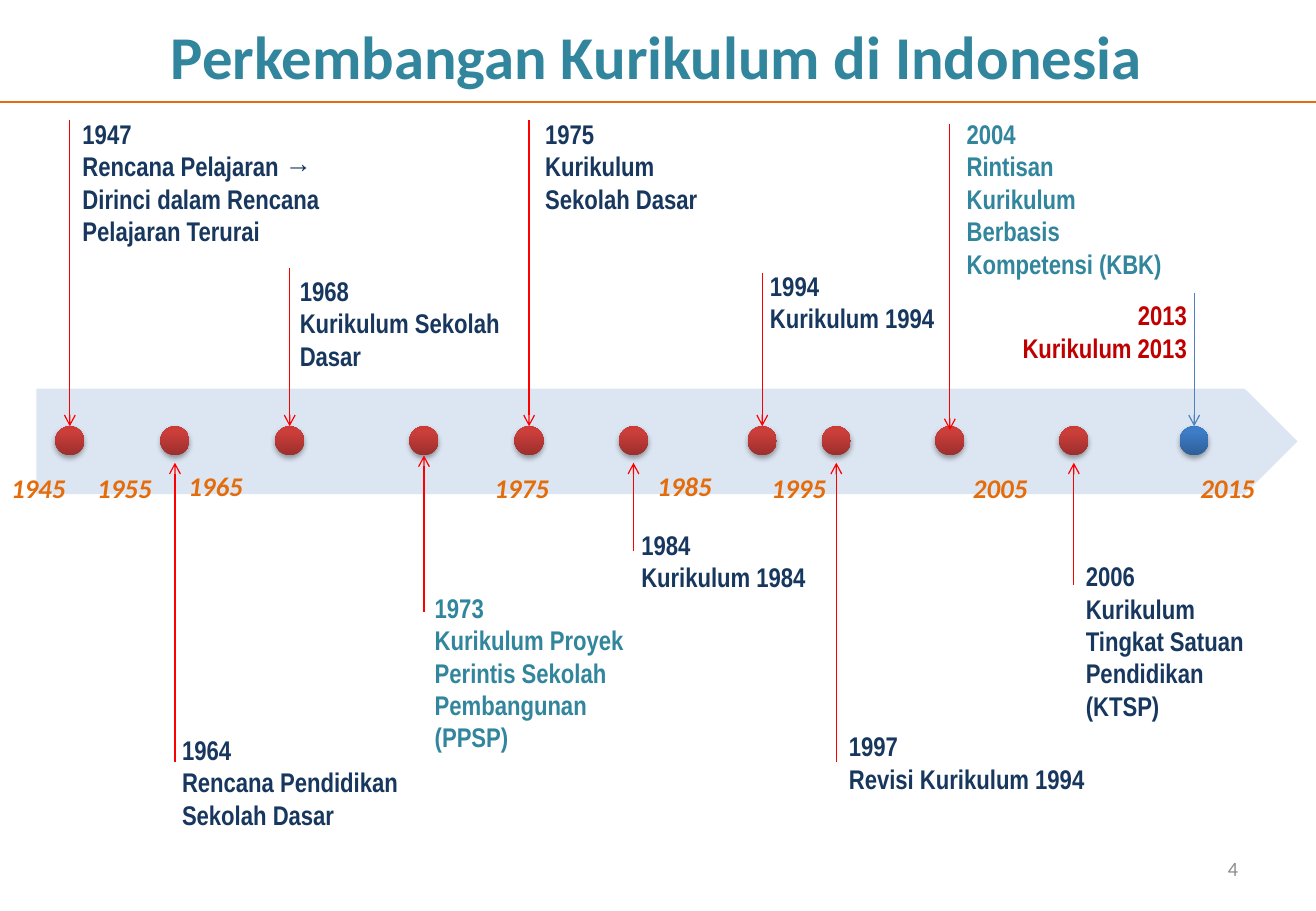
from copy import deepcopy
from pptx import Presentation
from pptx import util as u
from pptx.dml.color import RGBColor
from pptx.enum import shapes, text
from pptx.oxml import parse_xml
from pptx.oxml.ns import nsdecls

NAVY, TEAL, RED, ORANGE = "17375E", "31859C", "FF0000", "E46C0A"
LEFT, MID, RIGHT = text.PP_ALIGN.LEFT, text.PP_ALIGN.CENTER, text.PP_ALIGN.RIGHT
RED_BALL = ("9C2F2D", "CB3E3A", "CE3B37")
BLUE_BALL = ("2F5F99", "3D7CC7", "3A7CCB")
DOT_TOP, DOT_SIZE = 252.7, 17.3
ABOVE, BELOW = 252.7, 274.3


def hue(code):
    return RGBColor.from_string(code)


def effects(inner=""):
    return parse_xml(f"<a:effectLst {nsdecls('a')}>{inner}</a:effectLst>")


class Board:
    """Draws styled elements on the current slide, with lengths in points."""

    def __init__(self, deck):
        self.slide = deck.slides.add_slide(deck.slide_layouts[5])
        self.items = self.slide.shapes

    def fill_text(self, shape, lines, size, color, align=LEFT, font="Calibri",
                  bold=True, italic=False, anchor=text.MSO_ANCHOR.TOP,
                  fit=text.MSO_AUTO_SIZE.SHAPE_TO_FIT_TEXT):
        frame = shape.text_frame
        frame.word_wrap = True
        frame.auto_size = fit
        frame.vertical_anchor = anchor
        frame.text = "\n".join(lines)
        for par in frame.paragraphs:
            par.alignment = align
            par.font.name, par.font.size = font, u.Pt(size)
            par.font.bold, par.font.italic = bold, italic
            par.font.color.rgb = hue(color)

    def title(self, box, words):
        shape = self.items.title
        shape.left, shape.top, shape.width, shape.height = map(u.Pt, box)
        self.fill_text(shape, [words], 36, TEAL, MID,
                       anchor=text.MSO_ANCHOR.MIDDLE, fit=text.MSO_AUTO_SIZE.NONE)

    def label(self, box, lines, size, color, **style):
        self.fill_text(self.items.add_textbox(*map(u.Pt, box)), lines, size, color, **style)

    def line(self, start, end, color, arrow=False):
        link = self.items.add_connector(
            shapes.MSO_CONNECTOR.STRAIGHT, *map(u.Pt, (*start, *end)))
        link.line.color.rgb = hue(color)
        link.line.width = u.Pt(0.75)
        props = link._element.spPr
        if arrow:
            props.xpath("a:ln")[0].append(
                parse_xml(f'<a:headEnd {nsdecls("a")} type="arrow"/>'))
        props.append(effects())

    def shape(self, kind, box):
        item = self.items.add_shape(kind, *map(u.Pt, box))
        item.shadow.inherit = False
        item.line.fill.background()
        return item

    def band(self, box, color):
        item = self.shape(shapes.MSO_SHAPE.PENTAGON, box)
        item.fill.solid()
        item.fill.fore_color.rgb = hue(color)

    def dot(self, mid, colors):
        box = mid - DOT_SIZE / 2, DOT_TOP, DOT_SIZE, DOT_SIZE
        item = self.shape(shapes.MSO_SHAPE.OVAL, box)
        item.fill.gradient()
        item.fill.gradient_angle = 90
        props = item._element.spPr
        last = props.xpath(".//a:gs")[-1]
        last.addnext(deepcopy(last))
        for stop, place, color in zip(item.fill.gradient_stops, (0, 0.8, 1), colors):
            stop.position = place
            stop.color.rgb = hue(color)
        props.replace(props.xpath("a:effectLst")[0], effects(
            '<a:outerShdw blurRad="40000" dist="23000" dir="5400000" rotWithShape="0">'
            '<a:srgbClr val="000000"><a:alpha val="35000"/></a:srgbClr></a:outerShdw>'))


EVENTS = [
    (41.4, ABOVE, 71.3, (41.8, 66.2, 170, 85), NAVY,
     ["1947", "Rencana Pelajaran → Dirinci dalam Rencana Pelajaran Terurai"]),
    (103.7, BELOW, 451.4, (100.8, 431.3, 143.3, 65.5), NAVY,
     ["1964", "Rencana Pendidikan Sekolah Dasar"]),
    (171.7, ABOVE, 159.1, (170.6, 159.1, 143.3, 65.5), NAVY,
     ["1968", "Kurikulum Sekolah Dasar"]),
    (251.3, 270, 362.9, (250.6, 347, 139.7, 104.4), TEAL,
     ["1973", "Kurikulum Proyek Perintis Sekolah Pembangunan (PPSP)"]),
    (313.6, ABOVE, 71.3, (316.1, 66.2, 126.7, 65.5), NAVY,
     ["1975", "Kurikulum Sekolah Dasar"]),
    (375.5, BELOW, 326.9, (373, 309.6, 123.8, 46), NAVY,
     ["1984", "Kurikulum 1984"]),
    (451.8, ABOVE, 162, (449.3, 156.2, 133.2, 46), NAVY,
     ["1994", "Kurikulum 1994"]),
    (495.7, BELOW, 451.4, (496.1, 429.1, 177.1, 46), NAVY,
     ["1997", "Revisi Kurikulum 1994"]),
    (563, 254.9, 73.4, (565.9, 66.2, 136.8, 104.4), TEAL,
     ["2004", "Rintisan", "Kurikulum Berbasis Kompetensi (KBK)"]),
    (636.5, BELOW, 347, (636.5, 328.3, 126, 106.6), NAVY,
     ["2006", "Kurikulum Tingkat Satuan Pendidikan (KTSP)"]),
    (707.8, ABOVE, 173.5, (577.4, 173.5, 133.2, 65.5), "C00000",
     ["2013", "Kurikulum 2013"]),
]
YEARS = [(1945, 22.7, 275.8), (1955, 73.8, 275.8), (1965, 127.8, 275),
         (1975, 309.2, 275.8), (1985, 405.7, 275), (1995, 473.4, 275.8),
         (2005, 592.9, 275.8), (2015, 727.6, 275.8)]


def main():
    deck = Presentation()
    deck.slide_width, deck.slide_height = u.Pt(780), u.Pt(540)
    board = Board(deck)
    board.title((0, 5, 778.3, 55.4), "Perkembangan Kurikulum di Indonesia")
    board.line((0, 60.5), (780, 60.5), ORANGE)
    board.band((21.6, 230.4, 747.4, 62.6), "DCE6F2")
    for mid, tip, tail, box, color, lines in EVENTS:
        newest = lines[0] == "2013"
        board.dot(mid, BLUE_BALL if newest else RED_BALL)
        board.line((mid, tip), (mid, tail), "4F81BD" if newest else RED, arrow=True)
        board.label(box, lines, 16, color, font="Arial Narrow",
                    align=RIGHT if newest else LEFT)
    for year, mid, top in YEARS:
        board.label((mid - 35, top, 70, 26.6), [str(year)], 16, ORANGE,
                    align=MID, italic=True)
    board.label((558.7, 500.4, 182.2, 28.8), ["4"], 12, "8C8C8C", align=RIGHT,
                bold=False, anchor=text.MSO_ANCHOR.MIDDLE, fit=text.MSO_AUTO_SIZE.NONE)
    deck.save("out.pptx")


if __name__ == "__main__":
    main()
